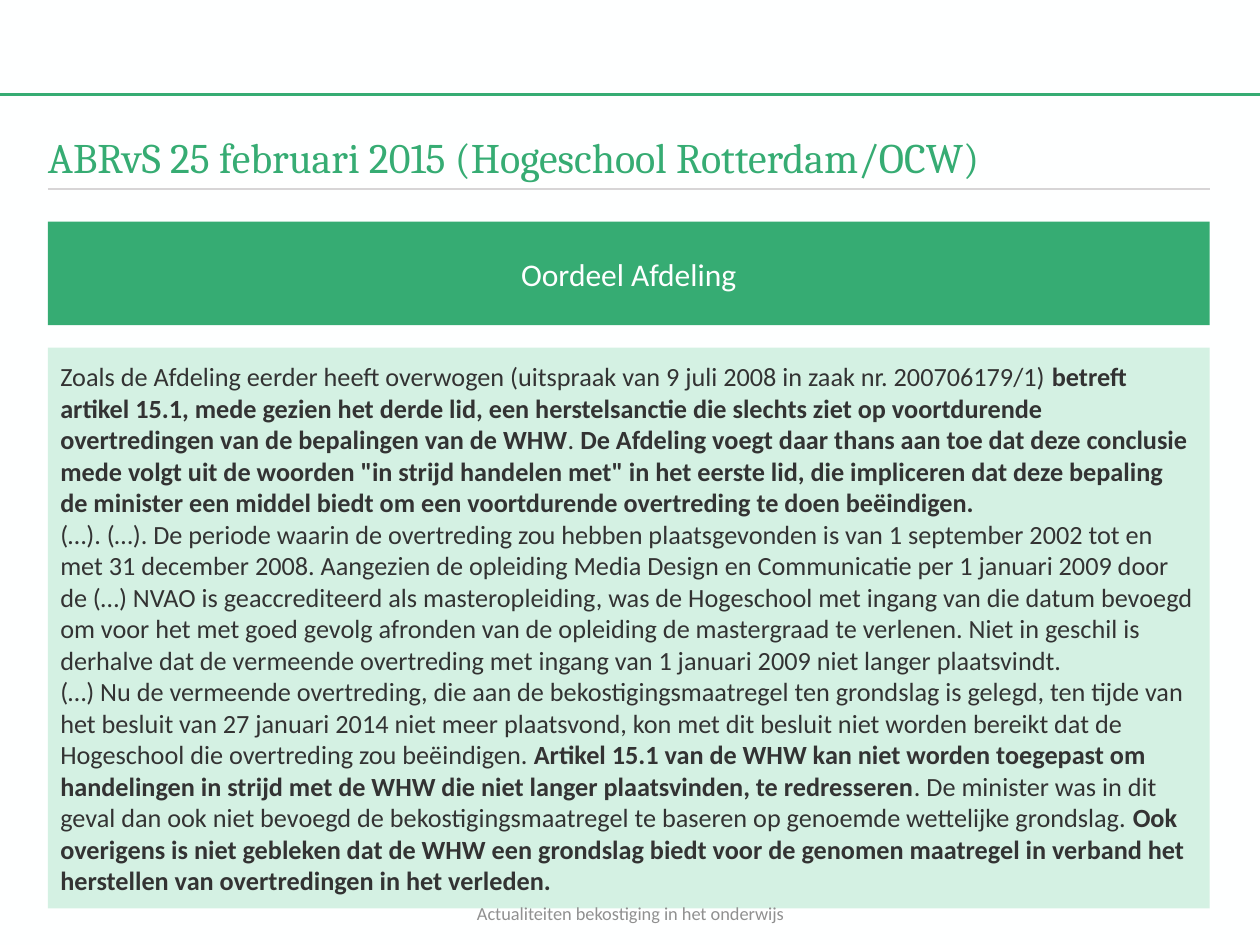
from dataclasses import dataclass

from lxml import etree
from pptx import Presentation
from pptx import util as u
from pptx.dml.color import RGBColor
from pptx.enum import shapes, text
from pptx.oxml.ns import qn


@dataclass(frozen=True)
class Theme:
    background: str = "FEFFFF"
    green: str = "36AC73"
    pale_green: str = "D4F1E3"
    rule: str = "D7D5D6"
    ink: str = "333333"
    muted: str = "909090"
    heading_font: str = "Cambria"
    body_font: str = "Calibri"
    title_size: float = 24
    banner_size: float = 18
    body_size: float = 15
    footer_size: float = 10.5


THEME = Theme()
LEFT, WIDTH = 0.38, 9.22

TITLE = [[("ABRvS 25 februari 2015 (Hogeschool Rotterdam/OCW)", False)]]
BANNER = [[("Oordeel Afdeling", False)]]
FOOTER = [[("Actualiteiten bekostiging in het onderwijs", False)]]
RULING = [
    [
        ("Zoals de Afdeling eerder heeft overwogen (uitspraak van 9 juli 2008 in zaak "
         "nr. 200706179/1) ", False),
        ("betreft artikel 15.1, mede gezien het derde lid, een herstelsanctie die slechts "
         "ziet op voortdurende overtredingen van de bepalingen van de WHW", True),
        (". ", False),
        ("De Afdeling voegt daar thans aan toe dat deze conclusie mede volgt uit de woorden "
         "\"in strijd handelen met\" in het eerste lid, die impliceren dat deze bepaling de "
         "minister een middel biedt om een voortdurende overtreding te doen beëindigen.", True),
    ],
    [
        ("(…). (…). De periode waarin de overtreding zou hebben plaatsgevonden is van "
         "1 september 2002 tot en met 31 december 2008. Aangezien de opleiding Media Design "
         "en Communicatie per 1 januari 2009 door de (…) NVAO is geaccrediteerd als "
         "masteropleiding, was de Hogeschool met ingang van die datum bevoegd om voor het met "
         "goed gevolg afronden van de opleiding de mastergraad te verlenen. Niet in geschil is "
         "derhalve dat de vermeende overtreding met ingang van 1 januari 2009 niet langer "
         "plaatsvindt.", False),
    ],
    [
        ("(…) Nu de vermeende overtreding, die aan de bekostigingsmaatregel ten grondslag is "
         "gelegd, ten tijde van het besluit van 27 januari 2014 niet meer plaatsvond, kon met "
         "dit besluit niet worden bereikt dat de Hogeschool die overtreding zou beëindigen. ",
         False),
        ("Artikel 15.1 van de WHW kan niet worden toegepast om handelingen in strijd met de "
         "WHW die niet langer plaatsvinden, te redresseren", True),
        (". De minister was in dit geval dan ook niet bevoegd de bekostigingsmaatregel te "
         "baseren op genoemde wettelijke grondslag. ", False),
        ("Ook overigens is niet gebleken dat de WHW een grondslag biedt voor de genomen "
         "maatregel in verband het herstellen van overtredingen in het verleden.", True),
    ],
]


def color(value):
    return RGBColor.from_string(value)


def write(shape, paragraphs, font, size, ink, align, anchor):
    frame = shape.text_frame
    frame.word_wrap = True
    frame.vertical_anchor = anchor
    for index, runs in enumerate(paragraphs):
        paragraph = frame.paragraphs[0] if index == 0 else frame.add_paragraph()
        paragraph.alignment = align
        for words, bold in runs:
            run = paragraph.add_run()
            run.text = words
            run.font.name = font
            run.font.size = u.Pt(size)
            run.font.bold = bold
            run.font.color.rgb = color(ink)


def add_label(slide, box, *style):
    shape = slide.shapes.add_textbox(*map(u.Inches, box))
    frame = shape.text_frame
    frame.margin_left = frame.margin_right = frame.margin_top = frame.margin_bottom = 0
    write(shape, *style)
    frame.auto_size = text.MSO_AUTO_SIZE.SHAPE_TO_FIT_TEXT


def add_panel(slide, box, fill, *style):
    shape = slide.shapes.add_shape(shapes.MSO_SHAPE.RECTANGLE, *map(u.Inches, box))
    shape.shadow.inherit = False
    shape.fill.solid()
    shape.fill.fore_color.rgb = color(fill)
    shape.line.fill.background()
    write(shape, *style)


def add_rule(slide, left, right, top, ink, weight):
    line = slide.shapes.add_connector(
        shapes.MSO_CONNECTOR.STRAIGHT, *map(u.Inches, (left, top, right, top)))
    line.line.color.rgb = color(ink)
    line.line.width = u.Pt(weight)
    etree.SubElement(line._element.spPr, qn("a:effectLst"))


def main():
    presentation = Presentation()
    presentation.slide_width, presentation.slide_height = u.Inches(10), u.Inches(7.5)
    slide = presentation.slides.add_slide(presentation.slide_layouts[6])
    slide.background.fill.solid()
    slide.background.fill.fore_color.rgb = color(THEME.background)

    left, center = text.PP_ALIGN.LEFT, text.PP_ALIGN.CENTER
    top, middle = text.MSO_ANCHOR.TOP, text.MSO_ANCHOR.MIDDLE

    add_rule(slide, 0, 10, 0.75, THEME.green, 1.5)
    add_rule(slide, LEFT, LEFT + WIDTH, 1.5, THEME.rule, 1)
    add_label(slide, (LEFT, 1.04, WIDTH, 0.4), TITLE,
              THEME.heading_font, THEME.title_size, THEME.green, left, top)
    add_panel(slide, (LEFT, 1.76, WIDTH, 0.82), THEME.green, BANNER,
              THEME.body_font, THEME.banner_size, THEME.background, center, middle)
    add_panel(slide, (LEFT, 2.76, WIDTH, 4.45), THEME.pale_green, RULING,
              THEME.body_font, THEME.body_size, THEME.ink, left, middle)
    add_label(slide, (3.42, 7.16, 3.17, 0.18), FOOTER,
              THEME.body_font, THEME.footer_size, THEME.muted, center, middle)

    presentation.save("out.pptx")


if __name__ == "__main__":
    main()
